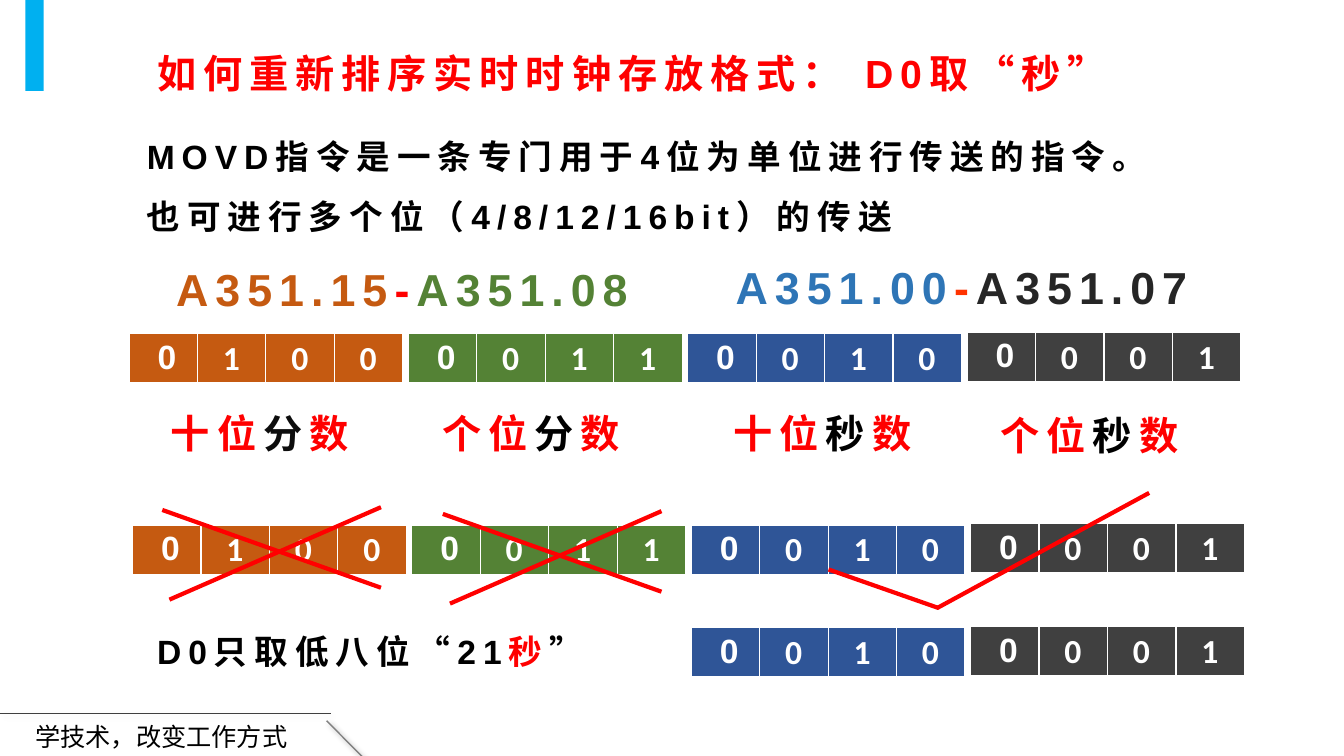
from lxml import etree
from pptx import Presentation
from pptx.dml.color import RGBColor
from pptx.enum.shapes import MSO_CONNECTOR, MSO_SHAPE
from pptx.enum.text import MSO_ANCHOR, MSO_AUTO_SIZE, PP_ALIGN
from pptx.oxml.ns import qn
from pptx.util import Cm, Pt

STRAIGHT = MSO_CONNECTOR.STRAIGHT
RECTANGLE = MSO_SHAPE.RECTANGLE
TOP = MSO_ANCHOR.TOP
GROW = MSO_AUTO_SIZE.SHAPE_TO_FIT_TEXT
LEFT = PP_ALIGN.LEFT

COLORS = {
    "red": "FF0000", "vermilion": "FF3300", "black": "000000", "ink": "0D0D0D",
    "coal": "262626", "white": "FFFFFF", "sky": "00B0F0", "azure": "2E75B6",
    "orange": "C55A11", "green": "548235", "navy": "2F5597", "slate": "404040",
    "gray": "808080",
}
LATIN, CHINESE, DIGIT = "Arial", "Noto Sans CJK SC", "Calibri"

NIBBLES = [("orange", "0100"), ("green", "0011"), ("navy", "0010"), ("slate", "0001")]
NIBBLE_STEP, NIBBLE_WIDTH = 7.04, 6.9
NIBBLE_ROWS = [(3.25, 8.41, 0), (3.34, 13.23, 0), (3.34, 15.82, 2)]

LABELS = [
    (4.06, 10.19, "十位", "分", "ink"), (10.9, 10.19, "个位", "分", "black"),
    (18.24, 10.19, "十位", "秒", "black"), (24.97, 10.24, "个位", "秒", "black"),
]
RANGES = [
    (4.19, 6.48, [("A351.15", "orange"), ("-", "red"), ("A351.08", "green")]),
    (18.29, 6.43, [("A351.00", "azure"), ("-", "vermilion"), ("A351.07", "coal")]),
]
CROSS = [(4.09, 12.85, 9.6, 14.81), (9.6, 12.78, 4.27, 15.11)]
CROSS_OFFSETS = [(0, 0), (7.07, 0.1)]
TICK = [(20.88, 14.35, 23.65, 15.32), (23.62, 15.32, 28.96, 12.42)]


def color(name):
    """Return the named colour."""
    return RGBColor.from_string(COLORS[name])


class SlideBuilder:
    """Hold the style and the current slide."""

    def __init__(self, page):
        """Start drawing on a page."""
        self.page = page

    def style(self, span, size, shade, font=LATIN, bold=True, spacing=0):
        """Format one run of text."""
        span.font.size = Pt(size)
        span.font.bold = bold
        span.font.name = font
        span.font.color.rgb = color(shade)
        properties = span.font._element
        properties.set("lang", "zh-CN")
        if spacing:
            properties.set("spc", str(spacing * 100))
        properties.find(qn("a:latin")).addnext(
            properties.makeelement(qn("a:ea"), {"typeface": CHINESE}))

    def fill_text(self, box, paragraphs, size, wrap=True, line_spacing=None, **look):
        """Write paragraphs of coloured spans into a box."""
        frame = box.text_frame
        frame.word_wrap = wrap
        frame.auto_size = GROW
        frame.vertical_anchor = TOP
        for index, spans in enumerate(paragraphs):
            para = frame.add_paragraph() if index else frame.paragraphs[0]
            para.alignment = LEFT
            para.line_spacing = line_spacing
            for text, shade in spans:
                span = para.add_run()
                span.text = text
                self.style(span, size, shade, **look)

    def title(self, left, top, width, height, spans, size):
        """Place and format the title placeholder."""
        box = self.page.shapes.title
        box.left, box.top, box.width, box.height = map(Cm, (left, top, width, height))
        self.fill_text(box, [spans], size, wrap=False, spacing=5)

    def text(self, left, top, width, height, paragraphs, size, **look):
        """Add a text box."""
        box = self.page.shapes.add_textbox(*map(Cm, (left, top, width, height)))
        self.fill_text(box, paragraphs, size, **look)

    def bar(self, left, top, width, height, shade):
        """Add a plain filled rectangle."""
        bar = self.page.shapes.add_shape(RECTANGLE, *map(Cm, (left, top, width, height)))
        bar.shadow.inherit = False
        bar.fill.solid()
        bar.fill.fore_color.rgb = color(shade)
        bar.line.fill.background()

    def line(self, ends, shade, weight, shadow=False):
        """Add a straight line, with a soft shadow on request."""
        line = self.page.shapes.add_connector(STRAIGHT, *map(Cm, ends))
        line.line.color.rgb = color(shade)
        line.line.width = Pt(weight)
        effects = etree.SubElement(line._element.spPr, qn("a:effectLst"))
        if shadow:
            outer = etree.SubElement(effects, qn("a:outerShdw"), blurRad=str(Pt(4)),
                                     dist=str(Pt(3)), dir="2700000")
            tint = etree.SubElement(outer, qn("a:srgbClr"), val=COLORS["black"])
            etree.SubElement(tint, qn("a:alpha"), val="40000")

    def border(self, cell):
        """Give a cell white borders, thicker at the bottom."""
        properties = cell._tc.get_or_add_tcPr()
        for index, (side, weight) in enumerate(zip("LRTB", (1, 1, 1, 3))):
            edge = properties.makeelement(qn(f"a:ln{side}"), {"w": str(Pt(weight))})
            fill = etree.SubElement(edge, qn("a:solidFill"))
            etree.SubElement(fill, qn("a:srgbClr"), val=COLORS["white"])
            properties.insert(index, edge)

    def nibble(self, left, top, shade, bits):
        """Add a one-row table of four bits."""
        frame = self.page.shapes.add_table(
            1, len(bits), *map(Cm, (left, top, NIBBLE_WIDTH, 1.27)))
        table = frame.table
        table.first_row = table.horz_banding = False
        table.rows[0].height = Cm(1.04)
        for index, bit in enumerate(bits):
            cell = table.cell(0, index)
            cell.margin_left = Cm(0.64 if index else 0.72)
            cell.fill.solid()
            cell.fill.fore_color.rgb = color(shade)
            self.border(cell)
            span = cell.text_frame.paragraphs[0].add_run()
            span.text = bit
            self.style(span, 24, "white", font=DIGIT if index else LATIN)


def main():
    """Build the slide and save it."""
    deck = Presentation()
    deck.slide_width, deck.slide_height = Cm(33.87), Cm(19.05)
    slide = SlideBuilder(deck.slides.add_slide(deck.slide_layouts[5]))

    slide.line((0, 17.96, 8.33, 17.96), "slate", 0.25, shadow=True)
    slide.text(0.64, 18.06, 30.89, 1.02, [[("学技术，改变工作方式", "black")]], 18,
               font=CHINESE, bold=False)
    slide.line((8.23, 18.16, 9.14, 19.08), "gray", 1, shadow=True)
    slide.bar(0.64, 0, 0.46, 2.29, "sky")

    slide.title(3.71, 1.12, 24.94, 1.45,
                [("如何重新排序实时时钟存放格式： D0取“秒”", "red")], 28)
    slide.text(3.45, 2.79, 26.9, 3.15,
               [[("MOVD指令是一条专门用于4位为单位进行传送的指令。", "black")],
                [("也可进行多个位（4/8/12/16bit）的传送", "black")]],
               24, line_spacing=1.5, spacing=5)

    for left, top, spans in RANGES:
        slide.text(left, top, 12.17, 1.63, [spans], 32, wrap=False, spacing=5)
    for left, top, place, unit, shade in LABELS:
        slide.text(left, top, 5.21, 1.45, [[(place, "red"), (unit, shade), ("数", "red")]],
                   28, wrap=False, spacing=5)
    for left, top, first in NIBBLE_ROWS:
        for index, (shade, bits) in enumerate(NIBBLES):
            if index >= first:
                lift = 0.03 if shade == "slate" else 0
                slide.nibble(left + index * NIBBLE_STEP, top - lift, shade, bits)

    slide.text(3.71, 15.77, 13.31, 1.27,
               [[("D0只取低八位“21", "black"), ("秒", "red"), ("”", "black")]],
               24, spacing=5)
    crosses = [(x1 + dx, y1 + dy, x2 + dx, y2 + dy)
               for dx, dy in CROSS_OFFSETS for x1, y1, x2, y2 in CROSS]
    for ends in crosses + TICK:
        slide.line(ends, "red", 3)

    deck.save("out.pptx")


if __name__ == "__main__":
    main()
